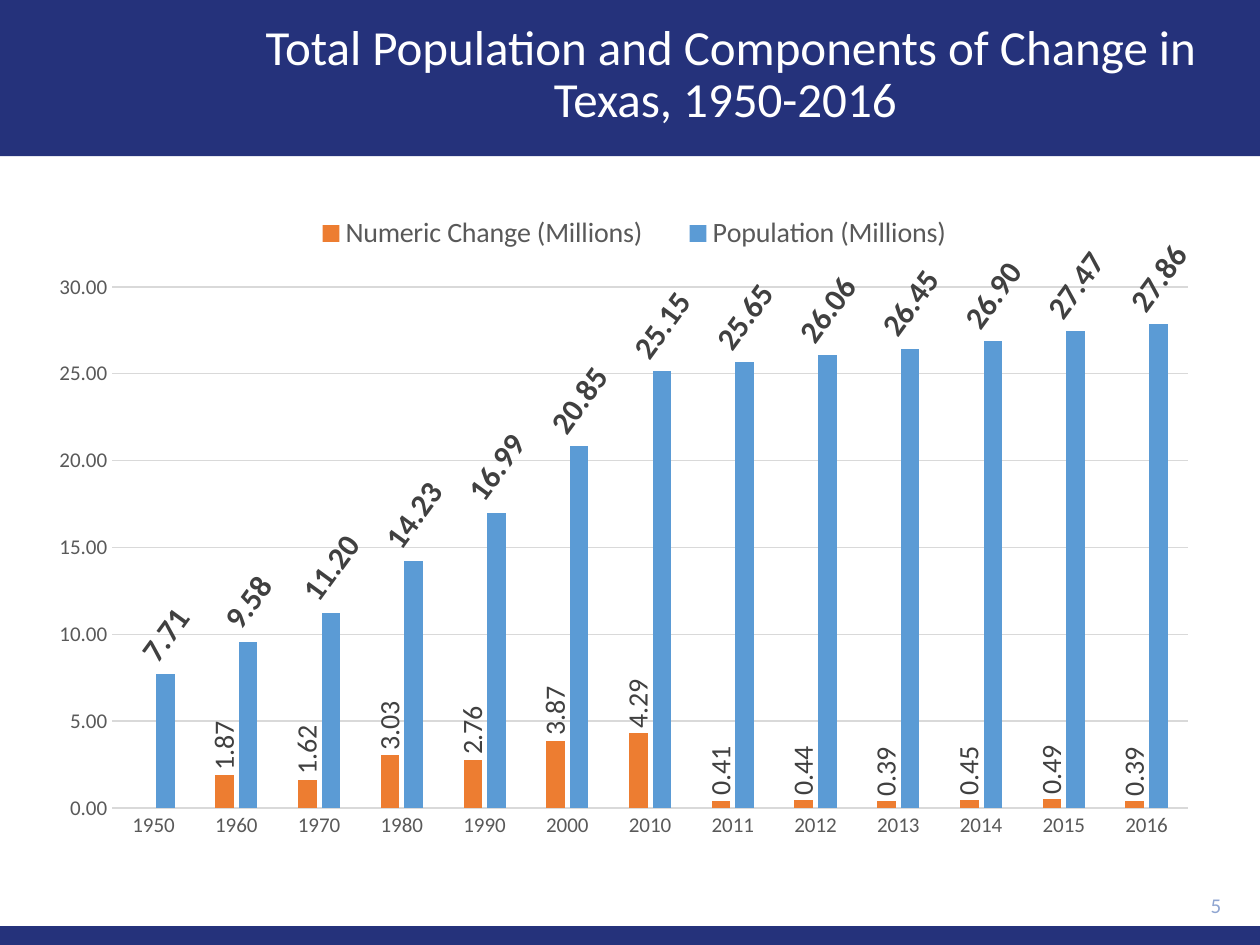
from lxml import etree
from pptx import Presentation
from pptx.chart.data import CategoryChartData
from pptx.dml.color import RGBColor
from pptx.enum.chart import XL_CHART_TYPE, XL_LABEL_POSITION, XL_LEGEND_POSITION, XL_TICK_MARK
from pptx.enum.shapes import MSO_SHAPE
from pptx.enum.text import MSO_ANCHOR, PP_ALIGN
from pptx.oxml.ns import qn
from pptx.util import Inches, Pt

COLUMN = XL_CHART_TYPE.COLUMN_CLUSTERED
OUTSIDE = XL_LABEL_POSITION.OUTSIDE_END
BOTTOM = XL_LEGEND_POSITION.BOTTOM
NO_TICK = XL_TICK_MARK.NONE
RECT = MSO_SHAPE.RECTANGLE
MIDDLE = MSO_ANCHOR.MIDDLE
CENTER, RIGHT = PP_ALIGN.CENTER, PP_ALIGN.RIGHT

FONT = "Calibri"
COLORS = {
    "navy": "25327B", "white": "FFFFFF", "page": "8FA5D1", "axis": "595959",
    "label": "404040", "grid": "D9D9D9", "orange": "ED7D31", "blue": "5B9BD5",
}
TITLE = "Total Population and Components of Change in Texas, 1950-2016 "
PAGE = "5"
BANDS = [(0, 1.24), (7.35, 0.15)]
YEARS = ["1950", "1960", "1970", "1980", "1990", "2000", "2010",
         "2011", "2012", "2013", "2014", "2015", "2016"]
SERIES = [
    {"name": "Numeric Change (Millions)", "color": "orange", "size": 16,
     "bold": False, "turn": -90,
     "vals": [None, 1.87, 1.62, 3.03, 2.76, 3.87, 4.29,
              0.41, 0.44, 0.39, 0.45, 0.49, 0.39]},
    {"name": "Population (Millions)", "color": "blue", "size": 18,
     "bold": True, "turn": -54,
     "vals": [7.71, 9.58, 11.20, 14.23, 16.99, 20.85, 25.15,
              25.65, 26.06, 26.45, 26.90, 27.47, 27.86]},
]
PLOT = {"x": 0.052, "y": 0.123, "w": 0.923, "h": 0.811}
LEGEND = {"x": 0.2, "y": 0.0, "w": 0.6, "h": 0.08}


def rgb(name):
    return RGBColor.from_string(COLORS[name])


def style(font, size, color, bold=False):
    font.name, font.size, font.bold = FONT, Pt(size), bold
    font.color.rgb = rgb(color)


def write(shape, text, size, color, align):
    frame = shape.text_frame
    frame.word_wrap = True
    frame.vertical_anchor = MIDDLE
    para = frame.paragraphs[0]
    para.alignment = align
    run = para.add_run()
    run.text = text
    style(run.font, size, color)
    return para


def place(node, index, area, inner=False):
    for old in node.findall(qn("c:layout")):
        node.remove(old)
    layout = etree.Element(qn("c:layout"))
    manual = etree.SubElement(layout, qn("c:manualLayout"))
    parts = [("layoutTarget", "inner")] if inner else []
    parts += [("xMode", "edge"), ("yMode", "edge")]
    parts += [(key, str(val)) for key, val in area.items()]
    for tag, val in parts:
        etree.SubElement(manual, qn("c:" + tag)).set("val", val)
    node.insert(index, layout)


def add_bands(slide):
    for top, height in BANDS:
        band = slide.shapes.add_shape(RECT, 0, Inches(top), Inches(10), Inches(height))
        band.shadow.inherit = False
        band.fill.solid()
        band.fill.fore_color.rgb = rgb("navy")
        band.line.fill.background()
        slide.shapes._spTree.insert(2 + BANDS.index((top, height)), band._element)


def add_title(slide):
    title = slide.shapes.title
    title.left, title.top = Inches(1.7), Inches(0.1)
    title.width, title.height = Inches(8.2), Inches(1)
    para = write(title, TITLE, 28, "white", CENTER)
    para.line_spacing = 0.9


def add_chart(slide):
    data = CategoryChartData(number_format="0.00")
    data.categories = YEARS
    for row in SERIES:
        data.add_series(row["name"], row["vals"])
    chart = slide.shapes.add_chart(
        COLUMN, Inches(0.41), Inches(1.65), Inches(9.25), Inches(5.1), data).chart
    chart.has_title = False
    chart.font.name, chart.font.size = FONT, Pt(10)

    plot = chart.plots[0]
    plot.gap_width, plot.overlap = 219, -27
    plot.vary_by_categories = False
    for series, row in zip(plot.series, SERIES):
        series.format.fill.solid()
        series.format.fill.fore_color.rgb = rgb(row["color"])
        series.invert_if_negative = False
        labels = series.data_labels
        labels.show_value = True
        labels.position = OUTSIDE
        labels.number_format, labels.number_format_is_linked = "0.00", False
        style(labels.font, row["size"], "label", row["bold"])
        body = labels._element.find(qn("c:txPr")).find(qn("a:bodyPr"))
        body.set("rot", str(row["turn"] * 60000))
        body.set("vert", "horz")

    years, values = chart.category_axis, chart.value_axis
    for axis in (years, values):
        axis.major_tick_mark = axis.minor_tick_mark = NO_TICK
        style(axis.tick_labels.font, 12, "axis")
    values.minimum_scale, values.maximum_scale, values.major_unit = 0, 30, 5
    values.tick_labels.number_format = "0.00"
    values.tick_labels.number_format_is_linked = False
    values.format.line.fill.background()
    values.has_major_gridlines = True
    for line in (years.format.line, values.major_gridlines.format.line):
        line.color.rgb, line.width = rgb("grid"), Pt(0.75)

    chart.has_legend = True
    legend = chart.legend
    legend.position = BOTTOM
    legend.include_in_layout = False
    style(legend.font, 16, "axis")
    place(legend._element, 1, LEGEND)
    place(chart._chartSpace.chart.plotArea, 0, PLOT, inner=True)


def main():
    deck = Presentation()
    deck.slide_width, deck.slide_height = Inches(10), Inches(7.5)
    slide = deck.slides.add_slide(deck.slide_layouts[5])
    slide.background.fill.solid()
    slide.background.fill.fore_color.rgb = rgb("white")
    add_bands(slide)
    add_title(slide)
    page = slide.shapes.add_textbox(Inches(8.9), Inches(7.01), Inches(0.89), Inches(0.34))
    write(page, PAGE, 12, "page", RIGHT)
    add_chart(slide)
    deck.save("out.pptx")


if __name__ == "__main__":
    main()
